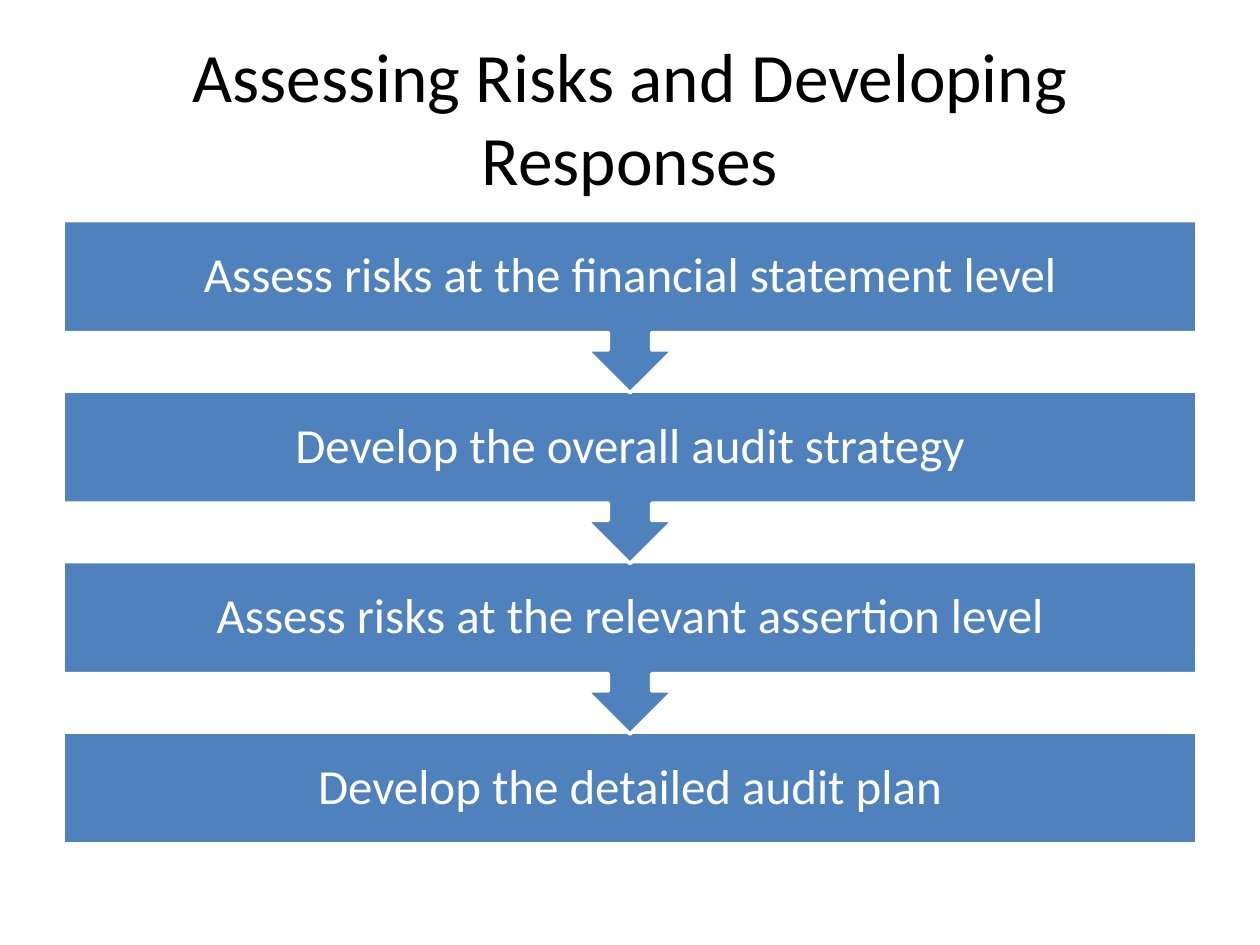
from pptx import Presentation
from pptx.dml.color import RGBColor
from pptx.enum.shapes import MSO_SHAPE
from pptx.enum.text import MSO_ANCHOR, PP_ALIGN
from pptx.util import Pt

TITLE = "Assessing Risks and Developing Responses"
STEPS = [
    "Assess risks at the financial statement level",
    "Develop the overall audit strategy",
    "Assess risks at the relevant assertion level",
    "Develop the detailed audit plan",
]
HUES = {"ink": "000000", "blue": "4F81BD", "white": "FFFFFF"}
LEFT, WIDE = 36, 648
TOP, STEP = 126, 97.45
BAR, CALL = 64.08, 98.56


def hue(name):
    return RGBColor.from_string(HUES[name])


def write(slide, text, top, high, size, color, sides, inset, space):
    box = slide.shapes.add_textbox(Pt(LEFT), Pt(top), Pt(WIDE), Pt(high))
    frame = box.text_frame
    look = {"word_wrap": True, "vertical_anchor": MSO_ANCHOR.MIDDLE,
            "margin_left": Pt(sides), "margin_right": Pt(sides),
            "margin_top": Pt(inset), "margin_bottom": Pt(inset)}
    for key, value in look.items():
        setattr(frame, key, value)
    para = frame.paragraphs[0]
    para.alignment = PP_ALIGN.CENTER
    para.line_spacing = space
    run = para.add_run()
    run.text = text
    for key, value in {"name": "Calibri", "size": Pt(size)}.items():
        setattr(run.font, key, value)
    run.font.color.rgb = hue(color)


def draw(slide, kind, top, high):
    shape = slide.shapes.add_shape(kind, Pt(LEFT), Pt(top), Pt(WIDE), Pt(high))
    shape.shadow.inherit = False
    shape.fill.solid()
    shape.fill.fore_color.rgb = hue("blue")
    shape.line.color.rgb = hue("white")
    shape.line.width = Pt(2)
    return shape


def main():
    deck = Presentation()
    deck.slide_width, deck.slide_height = Pt(720), Pt(540)
    slide = deck.slides.add_slide(deck.slide_layouts[6])
    write(slide, TITLE, 21.6, 90, 39.6, "ink", 7.2, 3.6, 1)
    last = len(STEPS) - 1
    for i in range(last, -1, -1):
        top = TOP + i * STEP
        if i == last:
            draw(slide, MSO_SHAPE.RECTANGLE, top, BAR)
        else:
            call = draw(slide, MSO_SHAPE.UP_ARROW_CALLOUT, top, CALL)
            call.rotation = 180
            call.adjustments[3] = 0.65
        write(slide, STEPS[i], top, BAR, 28, "white", 16, 16, 0.9)
    deck.save("out.pptx")


if __name__ == "__main__":
    main()
